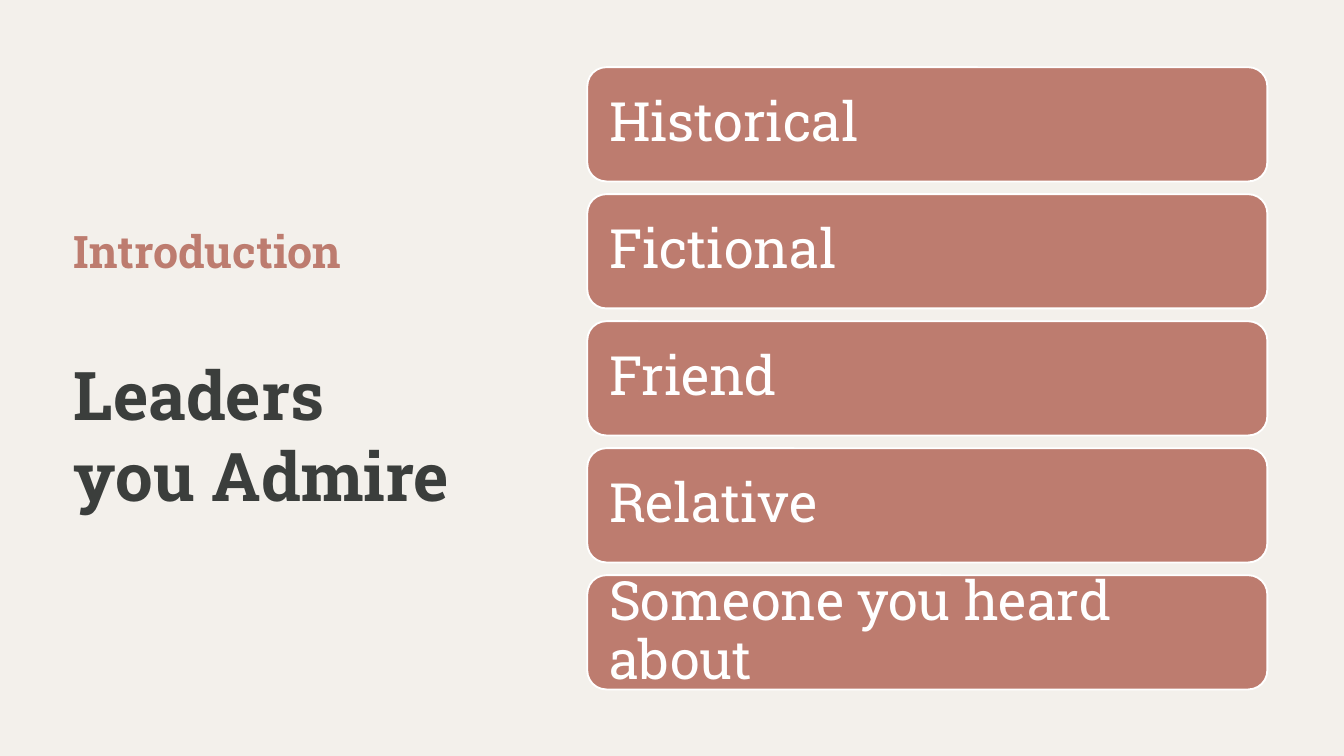
import dataclasses

import pptx
import pptx.dml.color
import pptx.enum.shapes
import pptx.enum.text
import pptx.util

Pt = pptx.util.Pt
Anchor = pptx.enum.text.MSO_ANCHOR
ROSE, WHITE, INK, CREAM = "BD7C6F", "FFFFFF", "3B3E3C", "F3F0EB"
FONT = "Roboto Slab"


@dataclasses.dataclass
class Box:
    left: float
    top: float
    width: float
    height: float


@dataclasses.dataclass
class Style:
    size: float
    color: str
    bold: bool = False
    anchor: Anchor = Anchor.TOP
    lines: float = 1.0


@dataclasses.dataclass
class Label:
    text: str
    box: Box
    style: Style


HEADS = [
    Label("Introduction", Box(32.4, 116.64, 232.56, 36),
          Style(24, ROSE, True, Anchor.BOTTOM, 0.9)),
    Label("Leaders\nyou Admire", Box(32.4, 185.76, 219.6, 94.32),
          Style(36, INK, True)),
]
KINDS = ["Historical", "Fictional", "Friend", "Relative",
         "Someone you heard about"]
FIRST = Box(314.64, 36, 364.32, 61.2)
STEP = 68.04
CARD = Style(29, WHITE, False, Anchor.MIDDLE, 0.9)


def paint(target, color: str) -> None:
    target.rgb = pptx.dml.color.RGBColor.from_string(color)


def place(box: Box) -> list[pptx.util.Length]:
    return [Pt(side) for side in dataclasses.astuple(box)]


def write(shape, text: str, style: Style) -> None:
    frame = shape.text_frame
    frame.text = text
    frame.word_wrap = True
    frame.vertical_anchor = style.anchor
    for para in frame.paragraphs:
        para.alignment = pptx.enum.text.PP_ALIGN.LEFT
        para.line_spacing = style.lines
        for run in para.runs:
            run.font.name = FONT
            run.font.size = Pt(style.size)
            run.font.bold = style.bold
            paint(run.font.color, style.color)


def head(slide, label: Label) -> None:
    shape = slide.shapes.add_textbox(*place(label.box))
    write(shape, label.text, label.style)


def card(slide, label: Label) -> None:
    kind = pptx.enum.shapes.MSO_SHAPE.ROUNDED_RECTANGLE
    shape = slide.shapes.add_shape(kind, *place(label.box))
    shape.shadow.inherit = False
    shape.fill.solid()
    paint(shape.fill.fore_color, ROSE)
    paint(shape.line.color, WHITE)
    shape.line.width = Pt(1)
    write(shape, label.text, label.style)
    frame = shape.text_frame
    frame.margin_left = frame.margin_right = Pt(8.7)
    frame.margin_top = frame.margin_bottom = Pt(8.7)


def main() -> None:
    deck = pptx.Presentation()
    deck.slide_width, deck.slide_height = Pt(720), Pt(405)
    slide = deck.slides.add_slide(deck.slide_layouts[6])
    slide.background.fill.solid()
    paint(slide.background.fill.fore_color, CREAM)
    for label in HEADS:
        head(slide, label)
    for row, text in enumerate(KINDS):
        box = dataclasses.replace(FIRST, top=FIRST.top + row * STEP)
        card(slide, Label(text, box, CARD))
    deck.save("out.pptx")


if __name__ == "__main__":
    main()
